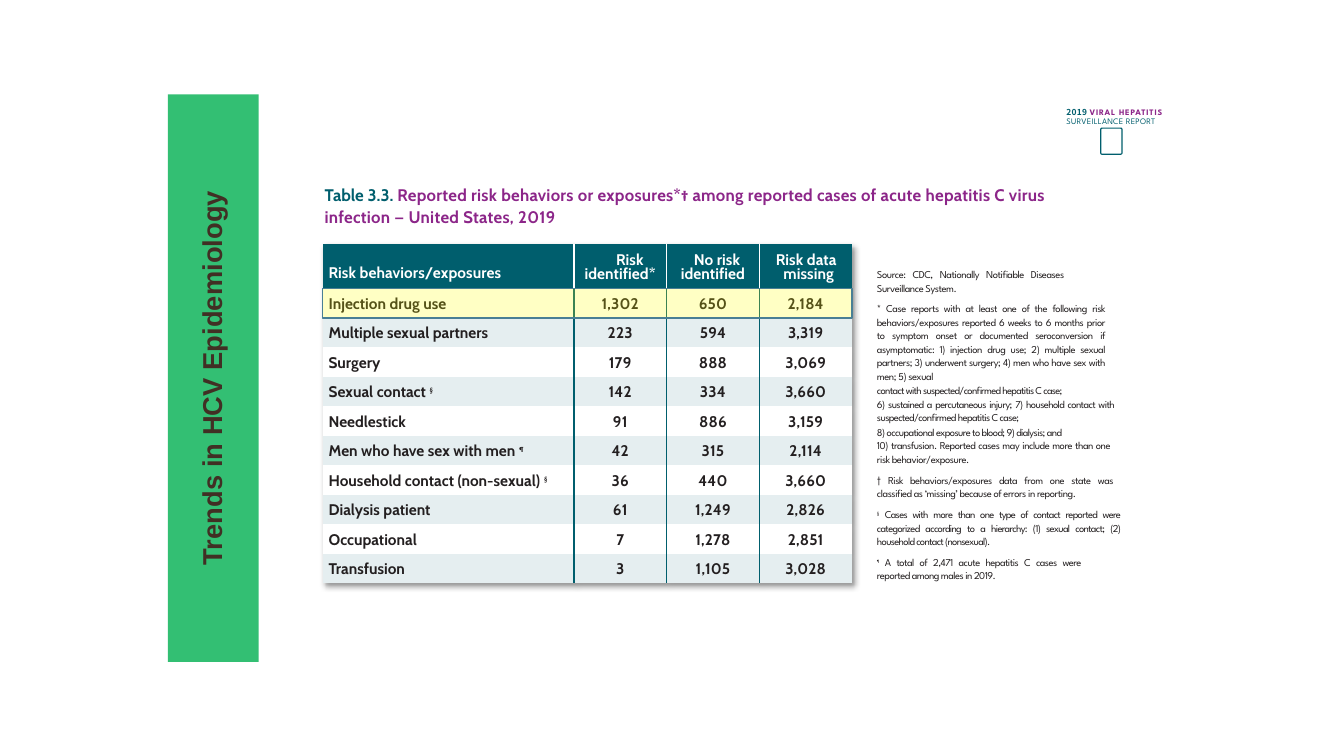
"""Build the slide on reported risk behaviors for acute hepatitis C."""
from dataclasses import dataclass

from lxml import etree
from pptx import Presentation
from pptx.dml.color import RGBColor
from pptx.enum.shapes import MSO_SHAPE
from pptx.enum.text import MSO_ANCHOR, MSO_AUTO_SIZE, PP_ALIGN
from pptx.oxml.ns import qn
from pptx.util import Emu, Inches, Pt

RECT, ROUND_RECT = MSO_SHAPE.RECTANGLE, MSO_SHAPE.ROUNDED_RECTANGLE
TOP, MIDDLE = MSO_ANCHOR.TOP, MSO_ANCHOR.MIDDLE
LEFT, CENTER, JUSTIFY = PP_ALIGN.LEFT, PP_ALIGN.CENTER, PP_ALIGN.JUSTIFY
NO_FIT = MSO_AUTO_SIZE.NONE
WIDTH, HEIGHT = Inches(13.33), Inches(7.5)
PLAIN_TABLE = "{2D5ABB26-0587-4C30-8999-92F81FD0307C}"


@dataclass(frozen=True)
class Theme:
    teal: str = "005E6D"
    purple: str = "8C2689"
    ink: str = "231F20"
    white: str = "FFFFFF"
    band: str = "E5EEF0"
    yellow: str = "FFFF00"
    outline: str = "497F95"
    green: str = "00B050"
    brown: str = "412F24"
    head_font: str = "Cabin"
    note_font: str = "League Spartan"
    year_font: str = "Noto Sans CJK TC"
    bar_font: str = "Arial"
    bar: float = 19.5
    title: float = 12
    cell: float = 11
    cell_mark: float = 9
    note: float = 7.5
    small: float = 6


T = Theme()


@dataclass(frozen=True)
class Box:
    """Percentages of the slide's width and height."""
    x: float
    y: float
    w: float
    h: float

    def emu(self) -> tuple[Emu, Emu, Emu, Emu]:
        return across(self.x), down(self.y), across(self.w), down(self.h)


@dataclass(frozen=True)
class Span:
    text: str
    size: float
    font: str
    color: str
    bold: bool = False
    track: float = 0
    rise: int = 0


@dataclass(frozen=True)
class Head:
    text: str
    margin: float
    first: float
    right: float
    top: float = 0.06


@dataclass(frozen=True)
class Risk:
    label: str
    counts: tuple[str, str, str]
    mark: str = ""


@dataclass(frozen=True)
class Note:
    text: str
    right: float
    before: float = 0
    track: float = -0.35
    mark: str = ""


BAR = Box(-5.25, 44, 42.24, 12)
TITLE = Box(24, 24, 56.2, 5.9)
TABLE = Box(24, 32.3, 39.4, 44.87)
HIGHLIGHT = Box(24, 38.17, 39.4, 3.9)
NOTES = Box(65.1, 35.07, 18.23, 41.73)
REPORT = Box(79.35, 14.3, 9.5, 2.7)
ICON = Box(81.9, 16.95, 1.58, 3.45)
COL_WIDTHS = (18.7, 6.9, 6.9, 6.9)
HEAD_ROW, BODY_ROW = 5.87, 3.9
RULES = (1.5, 0.75, 0.75)

HEADS = (
    Head("Risk behaviors/exposures", 0.06, 0, 0, 0.13),
    Head("Risk identified*", 0.07, 0.19, 0.07),
    Head("No risk identified", 0.09, 0.08, 0.09),
    Head("Risk data missing", 0.16, -0.05, 0.1),
)
RISKS = (
    Risk("Injection drug use", ("1,302", "650", "2,184")),
    Risk("Multiple sexual partners", ("223", "594", "3,319")),
    Risk("Surgery", ("179", "888", "3,069")),
    Risk("Sexual contact ", ("142", "334", "3,660"), "§"),
    Risk("Needlestick", ("91", "886", "3,159")),
    Risk("Men who have sex with men ", ("42", "315", "2,114"), "¶"),
    Risk("Household contact (non-sexual) ", ("36", "440", "3,660"), "§"),
    Risk("Dialysis patient", ("61", "1,249", "2,826")),
    Risk("Occupational", ("7", "1,278", "2,851")),
    Risk("Transfusion", ("3", "1,105", "3,028")),
)
NOTE_TEXTS = (
    Note("Source: CDC, Nationally Notifiable Diseases Surveillance System.", 0.56),
    Note("* Case reports with at least one of the following risk behaviors/exposures reported "
         "6 weeks to 6 months prior to symptom onset or documented seroconversion if "
         "asymptomatic: 1) injection drug use; 2) multiple sexual partners; 3) underwent "
         "surgery; 4) men who have sex with men; 5) sexual", 0.15, 5.3),
    Note("contact with suspected/confirmed hepatitis C case;", 0.1, 0.7, -0.5),
    Note("6) sustained a percutaneous injury; 7) household contact with "
         "suspected/confirmed hepatitis C case;", 0.06, 0, -0.45),
    Note("8) occupational exposure to blood; 9) dialysis; and", 0.1, 0.7, -0.45),
    Note("10) transfusion. Reported cases may include more than one risk behavior/exposure.", 0.1),
    Note("† Risk behaviors/exposures data from one state was classified as ‘missing’ "
         "because of errors in reporting.", 0.07, 5.3),
    Note("Cases with more than one type of contact reported were categorized according to a "
         "hierarchy: (1) sexual contact; (2) household contact (nonsexual).", 0, 5.2, -0.5, "§ "),
    Note("A total of 2,471 acute hepatitis C cases were reported among males in 2019.",
         0.39, 5.3, -0.4, "¶ "),
)


def across(share: float) -> Emu:
    return Emu(round(WIDTH * share / 100))


def down(share: float) -> Emu:
    return Emu(round(HEIGHT * share / 100))


def write(p, *spans: Span) -> None:
    for span in spans:
        r = p.add_run()
        r.text = span.text
        r.font.size, r.font.name, r.font.bold = Pt(span.size), span.font, span.bold
        r.font.color.rgb = RGBColor.from_string(span.color)
        rPr = r._r.get_or_add_rPr()
        rPr.set("spc", str(round(span.track * 100)))
        if span.rise:
            rPr.set("baseline", str(span.rise * 1000))


def indent(p, left: float, first: float = 0, right: float = 0) -> None:
    pPr = p._p.get_or_add_pPr()
    for key, value in (("marL", left), ("marR", right), ("indent", first)):
        pPr.set(key, str(Inches(value)))


def frame(sp, box: Box, top: float = 0):
    sp.left, sp.top, sp.width, sp.height = box.emu()
    tf = sp.text_frame
    tf.word_wrap, tf.auto_size, tf.vertical_anchor = True, NO_FIT, TOP
    tf.margin_left = tf.margin_right = tf.margin_bottom = 0
    tf.margin_top = Inches(top)
    return tf


def add_block(s, kind, box: Box, fill: str = "", alpha: int = 100, line: str = "", weight: float = 1):
    sp = s.shapes.add_shape(kind, *box.emu())
    sp.shadow.inherit = False
    if fill:
        sp.fill.solid()
        sp.fill.fore_color.rgb = RGBColor.from_string(fill)
        color = sp._element.spPr.find(".//" + qn("a:srgbClr"))
        etree.SubElement(color, qn("a:alpha"), val=str(alpha * 1000))
    else:
        sp.fill.background()
    if line:
        sp.line.color.rgb = RGBColor.from_string(line)
        sp.line.width = Pt(weight)
    else:
        sp.line.fill.background()
    return sp


def format_cell(cell, col: int, fill: str, rule: str, top: float) -> None:
    cell.margin_left = cell.margin_right = cell.margin_bottom = 0
    cell.margin_top = Inches(top)
    cell.fill.solid()
    cell.fill.fore_color.rgb = RGBColor.from_string(fill)
    edges = [("a:lnL", RULES[col - 1])] if col else []
    edges += [("a:lnR", RULES[col])] if col < len(RULES) else []
    for i, (tag, weight) in enumerate(edges):
        ln = etree.Element(qn(tag), w=str(Pt(weight)))
        etree.SubElement(etree.SubElement(ln, qn("a:solidFill")), qn("a:srgbClr"), val=rule)
        cell._tc.get_or_add_tcPr().insert(i, ln)


def add_risk_table(s) -> None:
    table = s.shapes.add_table(len(RISKS) + 1, len(HEADS), *TABLE.emu()).table
    table.first_row = table.horz_banding = False
    tblPr = table._tbl.tblPr
    tblPr.find(qn("a:tableStyleId")).text = PLAIN_TABLE
    effects = etree.Element(qn("a:effectLst"))
    shadow = etree.SubElement(effects, qn("a:outerShdw"), blurRad=str(Pt(4)),
                              dist=str(Pt(3)), dir="2700000", algn="tl", rotWithShape="0")
    color = etree.SubElement(shadow, qn("a:srgbClr"), val="000000")
    etree.SubElement(color, qn("a:alpha"), val="40000")
    tblPr.insert(0, effects)
    for col, width in zip(table.columns, COL_WIDTHS):
        col.width = across(width)
    for i, row in enumerate(table.rows):
        row.height = down(BODY_ROW if i else HEAD_ROW)
    for col, head in enumerate(HEADS):
        cell = table.cell(0, col)
        format_cell(cell, col, T.teal, T.white, head.top)
        cell.vertical_anchor = MIDDLE
        p = cell.text_frame.paragraphs[0]
        indent(p, head.margin, head.first, head.right)
        if col:
            p.alignment, p.line_spacing = CENTER, Pt(10)
        write(p, Span(head.text, T.cell, T.head_font, T.white, True, 0.05))
    for i, risk in enumerate(RISKS, 1):
        for col, text in enumerate((risk.label, *risk.counts)):
            cell = table.cell(i, col)
            format_cell(cell, col, T.white if i % 2 else T.band, T.teal, 0.06)
            p = cell.text_frame.paragraphs[0]
            write(p, Span(text, T.cell, T.head_font, T.ink, True, 0.1 if col else 0))
            if col:
                p.alignment = CENTER
            else:
                indent(p, 0.06)
                if risk.mark:
                    write(p, Span(risk.mark, T.cell_mark, T.head_font, T.ink, True, 0.2, 33))


def add_notes(sp) -> None:
    tf = frame(sp, NOTES, 0.02)
    for i, note in enumerate(NOTE_TEXTS):
        p = tf.add_paragraph() if i else tf.paragraphs[0]
        indent(p, 0.02, 0, note.right)
        etree.SubElement(p._p.get_or_add_pPr(), qn("a:buNone"))
        p.alignment, p.line_spacing, p.space_before = JUSTIFY, 1.07, Pt(note.before)
        if note.mark:
            write(p, Span(note.mark, T.small, T.note_font, T.ink, track=0.2, rise=35))
        write(p, Span(note.text, T.note, T.note_font, T.ink, track=note.track))


def add_report_label(s) -> None:
    tf = frame(s.shapes.add_textbox(*REPORT.emu()), REPORT)
    lines = (
        (Span("2019 ", T.small, T.year_font, T.teal, True, 0.2),
         Span("VIRAL HEPATITIS", T.small, T.note_font, T.purple, True, 0.6)),
        (Span("SURVEILLANCE REPORT", T.small, T.note_font, T.teal, track=0.2),),
    )
    for i, spans in enumerate(lines):
        p = tf.add_paragraph() if i else tf.paragraphs[0]
        p.line_spacing = Pt(6.3)
        write(p, *spans)
    add_block(s, ROUND_RECT, ICON, line=T.teal, weight=0.86).adjustments[0] = 0.06


def main() -> None:
    prs = Presentation()
    prs.slide_width, prs.slide_height = WIDTH, HEIGHT
    s = prs.slides.add_slide(prs.slide_layouts[1])
    p = frame(s.shapes.title, TITLE, 0.02).paragraphs[0]
    p.alignment, p.line_spacing = LEFT, 1.07
    indent(p, 0.02)
    write(p, Span("Table 3.3. ", T.title, T.head_font, T.teal, True),
          Span("Reported risk behaviors or exposures*† among reported cases of acute hepatitis C "
               "virus infection — United States, 2019", T.title, T.head_font, T.purple, True, 0.2))
    add_risk_table(s)
    add_notes(s.placeholders[1])
    add_report_label(s)
    add_block(s, RECT, HIGHLIGHT, T.yellow, 23, T.outline)
    bar = add_block(s, RECT, BAR, T.green, 80)
    bar.rotation = 270
    tf = bar.text_frame
    tf.vertical_anchor = MIDDLE
    p = tf.paragraphs[0]
    p.alignment, p.line_spacing = CENTER, 0.9
    write(p, Span("Trends in HCV Epidemiology", T.bar, T.bar_font, T.brown, True))
    prs.save("out.pptx")


if __name__ == "__main__":
    main()
